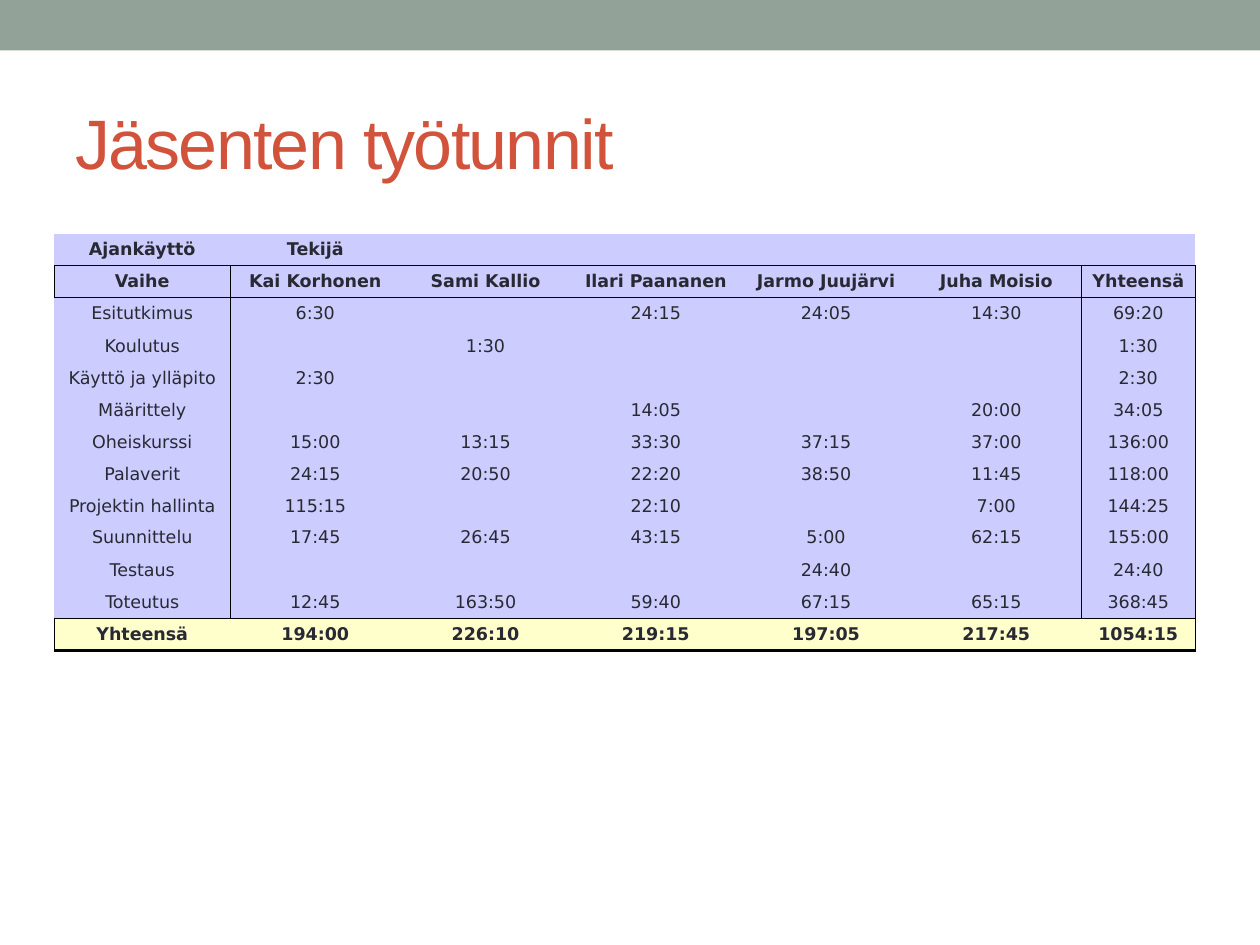
import pptx
import pptx.dml.color
import pptx.enum.shapes
import pptx.enum.text
import pptx.oxml.ns
import pptx.util
from lxml import etree

Pt = pptx.util.Pt
qn = pptx.oxml.ns.qn
color = pptx.dml.color.RGBColor.from_string

THEME = {
    "band": color("93A299"),
    "title": color("D2533C"),
    "text": color("292934"),
    "body": color("CCCCFF"),
    "total": color("FFFFCC"),
    "line": "000000",
    "title_size": Pt(40),
    "cell_size": Pt(10),
    "title_font": "Arial",
    "cell_font": "DejaVu Sans",
}

HOURS = [
    ["Ajankäyttö", "Tekijä", "", "", "", "", ""],
    ["Vaihe", "Kai Korhonen", "Sami Kallio", "Ilari Paananen",
     "Jarmo Juujärvi", "Juha Moisio", "Yhteensä"],
    ["Esitutkimus", "6:30", "", "24:15", "24:05", "14:30", "69:20"],
    ["Koulutus", "", "1:30", "", "", "", "1:30"],
    ["Käyttö ja ylläpito", "2:30", "", "", "", "", "2:30"],
    ["Määrittely", "", "", "14:05", "", "20:00", "34:05"],
    ["Oheiskurssi", "15:00", "13:15", "33:30", "37:15", "37:00", "136:00"],
    ["Palaverit", "24:15", "20:50", "22:20", "38:50", "11:45", "118:00"],
    ["Projektin hallinta", "115:15", "", "22:10", "", "7:00", "144:25"],
    ["Suunnittelu", "17:45", "26:45", "43:15", "5:00", "62:15", "155:00"],
    ["Testaus", "", "", "", "24:40", "", "24:40"],
    ["Toteutus", "12:45", "163:50", "59:40", "67:15", "65:15", "368:45"],
    ["Yhteensä", "194:00", "226:10", "219:15", "197:05", "217:45", "1054:15"],
]
COLUMN_WIDTHS = [100.5, 97.3, 97.3, 97.3, 97.3, 97.3, 65]
ROW_HEIGHTS = [18, 18, 18.7, 18.7, 18.7, 18, 18, 18.7, 18, 18, 18.7, 18, 18.7]
LAST_ROW = len(HOURS) - 1

# Rule widths: horizontal by row boundary, vertical by column boundary and rows
HORIZONTAL_RULES = {1: 0.5, 2: 0.5, LAST_ROW: 0.5, LAST_ROW + 1: 1.5}
VERTICAL_RULES = {
    0: {1, LAST_ROW},
    1: set(range(1, LAST_ROW)),
    6: set(range(1, LAST_ROW)),
    7: set(range(1, LAST_ROW + 1)),
}


def set_border(cell, side, width):
    """Rule one side (L, R, T or B) of a cell; width 0 leaves it open."""
    line = etree.SubElement(cell._tc.get_or_add_tcPr(), qn(f"a:ln{side}"))
    if not width:
        etree.SubElement(line, qn("a:noFill"))
        return
    line.set("w", str(int(Pt(width))))
    fill = etree.SubElement(line, qn("a:solidFill"))
    etree.SubElement(fill, qn("a:srgbClr")).set("val", THEME["line"])


def add_text(paragraph, text, text_color, **font_format):
    run = paragraph.add_run()
    run.text = text
    run.font.color.rgb = text_color
    for name, value in font_format.items():
        setattr(run.font, name, value)
    return run


presentation = pptx.Presentation()
presentation.slide_width = Pt(720)
presentation.slide_height = Pt(540)
slide = presentation.slides.add_slide(presentation.slide_layouts[6])

band = slide.shapes.add_shape(
    pptx.enum.shapes.MSO_SHAPE.RECTANGLE, 0, 0, Pt(720), Pt(28.8))
band.shadow.inherit = False
band.fill.solid()
band.fill.fore_color.rgb = THEME["band"]
band.line.fill.background()

title = slide.shapes.add_textbox(Pt(36), Pt(42), Pt(648), Pt(78))
title.text_frame.word_wrap = True
title.text_frame.vertical_anchor = pptx.enum.text.MSO_ANCHOR.MIDDLE
title_run = add_text(
    title.text_frame.paragraphs[0], "Jäsenten työtunnit", THEME["title"],
    name=THEME["title_font"], size=THEME["title_size"])
title_run._r.get_or_add_rPr().set("spc", "-100")

table = slide.shapes.add_table(
    len(ROW_HEIGHTS), len(COLUMN_WIDTHS), Pt(31), Pt(133.7),
    Pt(sum(COLUMN_WIDTHS)), Pt(sum(ROW_HEIGHTS))).table
table.first_row = False
table.horz_banding = False
for column, width in zip(table.columns, COLUMN_WIDTHS):
    column.width = Pt(width)
for row, height in zip(table.rows, ROW_HEIGHTS):
    row.height = Pt(height)

cell_format = {
    "margin_left": 0, "margin_right": 0, "margin_top": 0, "margin_bottom": 0,
    "vertical_anchor": pptx.enum.text.MSO_ANCHOR.MIDDLE,
}
for row_index, row_texts in enumerate(HOURS):
    for column_index, text in enumerate(row_texts):
        cell = table.cell(row_index, column_index)
        for name, value in cell_format.items():
            setattr(cell, name, value)
        for side, boundary in (("L", column_index), ("R", column_index + 1)):
            ruled = row_index in VERTICAL_RULES.get(boundary, ())
            set_border(cell, side, 0.5 if ruled else 0)
        for side, boundary in (("T", row_index), ("B", row_index + 1)):
            set_border(cell, side, HORIZONTAL_RULES.get(boundary, 0))
        cell.fill.solid()
        cell.fill.fore_color.rgb = THEME["total" if row_index == LAST_ROW else "body"]

        paragraph = cell.text_frame.paragraphs[0]
        paragraph.alignment = pptx.enum.text.PP_ALIGN.CENTER
        if text:
            add_text(paragraph, text, THEME["text"], name=THEME["cell_font"],
                     size=THEME["cell_size"], bold=row_index in (0, 1, LAST_ROW))
        else:
            # An empty cell needs a small type size to keep its row height
            end = etree.SubElement(paragraph._p, qn("a:endParaRPr"))
            end.set("sz", str(int(THEME["cell_size"].pt * 100)))

presentation.save("out.pptx")
